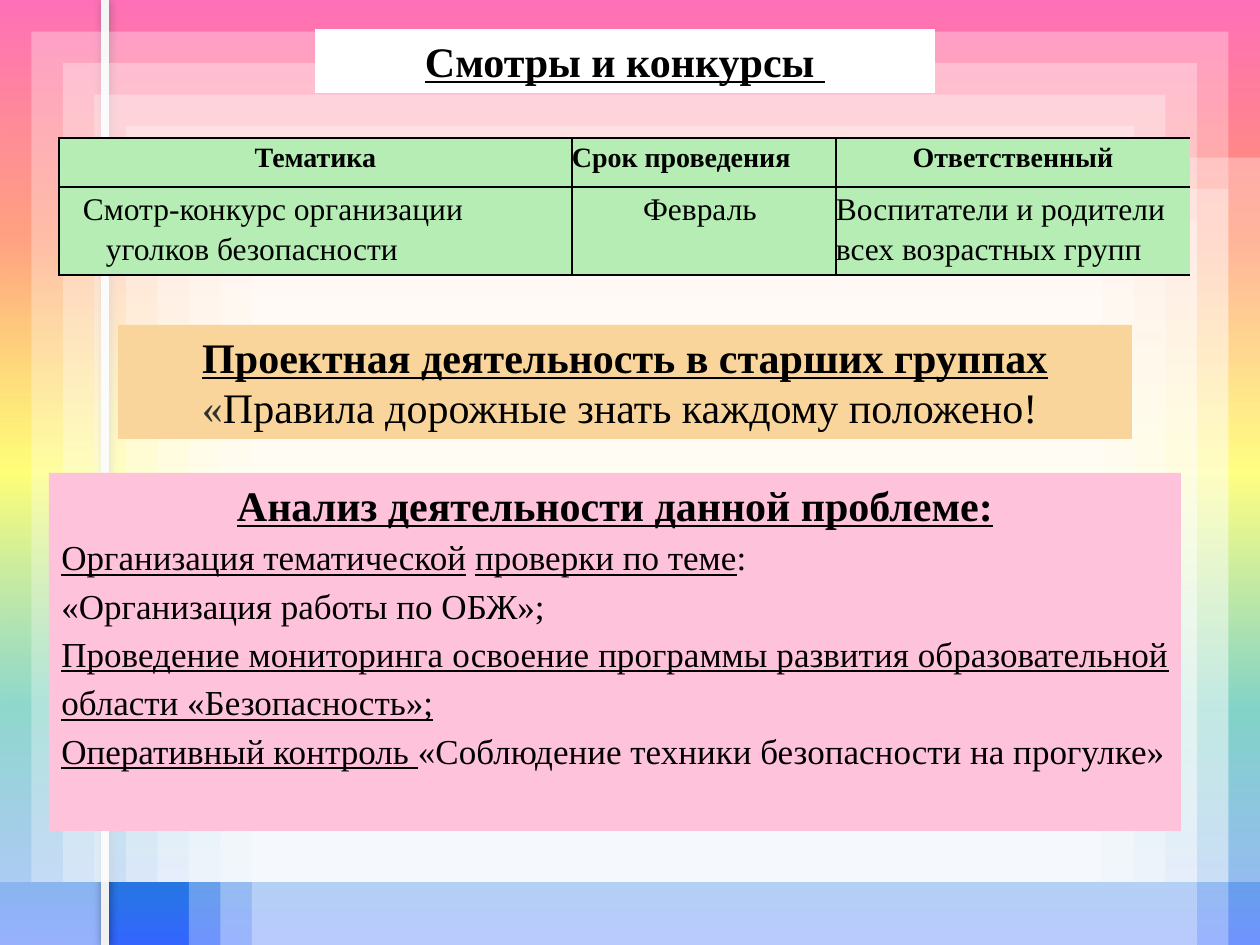
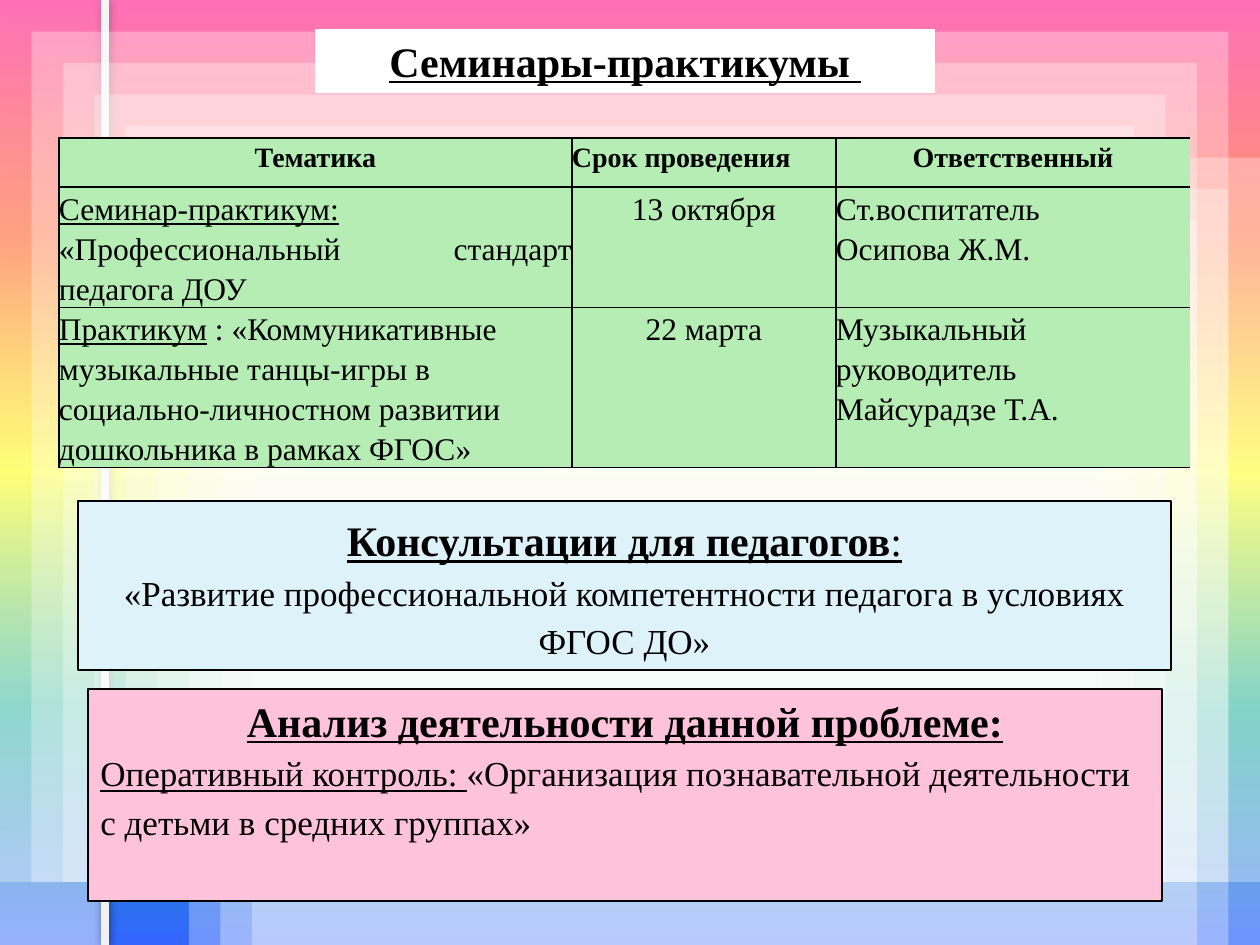
from lxml import etree
from pptx import Presentation
from pptx import util as u
from pptx.dml.color import RGBColor
from pptx.enum import shapes, text
from pptx.oxml import parse_xml
from pptx.oxml.ns import qn

# Shared look
FONT = "Times New Roman"
HEX = {"white": "FFFFFF", "black": "000000", "grey": "303030", "rail": "F1F1F1",
       "green": "B5EDB5", "sand": "F9D59B", "pink": "FFC2DB", "sky": "DEF2FA"}
SKY = [(0, "FF3399", 100), (25, "FF6633", 100), (50, "FFFF00", 100),
       (75, "01A78F", 100), (100, "3366FF", 100)]
FADE = [(0, HEX["white"], 50), (100, HEX["white"], 0)]
ALIGN = {"l": text.PP_ALIGN.LEFT, "c": text.PP_ALIGN.CENTER, "j": text.PP_ALIGN.JUSTIFY}
NS = "http://schemas.openxmlformats.org/drawingml/2006/main"
W, H, STEP = 1260, 945, 31.5
TITLE = (315, 29, 620, 64)
GRID = (59, 138)
COLS = (513, 264, 354)


# Content: a paragraph is (align, spacing, size, runs, indent);
# a run is (text, flags) with b bold, u underlined, g grey
def para(align, *runs, size=18, gap=1.15, indent=0):
    return align, gap, size, runs, indent


def head(words, gap=1.0, *more):
    return para("c", (words, "bu"), *more, size=24, gap=gap)


def body(align, *runs):
    return para(align, *runs, size=20)


TOP = [[para("c", ("Тематика", "b"), size=16)],
       [para("l", ("Срок проведения", "b"), size=16)],
       [para("c", ("Ответственный", "b"), size=16)]]
ISSUE = head("Анализ деятельности данной проблеме:")

SLIDES = [
    {"title": "Смотры и конкурсы ",
     "rows": (49, 88),
     "cells": [TOP, [
         [para("l", ("Смотр-конкурс организации", ""), indent=24),
          para("j", ("уголков безопасности", ""), indent=47)],
         [para("c", ("Февраль ", ""))],
         [para("l", ("Воспитатели и родители всех возрастных групп", ""))]]],
     "boxes": [
         ((118, 325, 1014, 114), "sand", False, [
             head("Проектная деятельность в старших группах"),
             para("c", ("«", "g"), ("Правила дорожные знать каждому положено! ", ""),
                  size=24, gap=1.0)]),
         ((49, 473, 1132, 358), "pink", False, [
             ISSUE,
             body("j", ("Организация тематической", "u"), (" ", ""),
                  ("проверки по теме", "u"), (": ", "")),
             body("j", ("«Организация работы по ОБЖ»;", "")),
             body("j", ("Проведение мониторинга освоение программы развития "
                        "образовательной области «Безопасность»;", "u")),
             body("j", ("Оперативный контроль ", "u"),
                  ("«Соблюдение техники безопасности на прогулке»", ""))])]},
    {"title": "Семинары-практикумы ",
     "rows": (49, 120, 160),
     "cells": [TOP, [
         [para("j", ("Семинар-практикум:", "u"), ("\n", ""),
               ("«Профессиональный стандарт педагога ДОУ", ""))],
         [para("c", ("13 октября", ""))],
         [para("l", ("Ст.воспитатель", "")), para("l", ("Осипова Ж.М.", ""))]], [
         [para("l", ("Практикум", "u"),
               (" : «Коммуникативные музыкальные танцы-игры в социально-личностном "
                "развитии дошкольника в рамках ФГОС»", ""))],
         [para("c", ("22 марта", ""))],
         [para("l", ("Музыкальный руководитель", "")),
          para("l", ("Майсурадзе Т.А.", ""))]]],
     "boxes": [
         ((88, 689, 1074, 212), "pink", True, [
             ISSUE,
             body("l", ("Оперативный контроль: ", "u"),
                  ("«Организация познавательной деятельности с детьми "
                   "в средних группах»", ""))]),
         ((78, 501, 1093, 169), "sky", True, [
             head("Консультации для педагогов", 1.15, (":", "u")),
             body("c", ("«Развитие профессиональной компетентности педагога "
                        "в условиях ФГОС ДО»", ""))])]},
]


# Helpers
def px(n):
    return u.Emu(round(n * 914400 / 126))


def rgb(name):
    return RGBColor.from_string(HEX[name])


def put(obj, **vals):
    for key, val in vals.items():
        setattr(obj, key, val)


def place(obj, box):
    put(obj, **dict(zip(("left", "top", "width", "height"), map(px, box))))


def grad(stops, ang):
    gs = "".join(f'<a:gs pos="{pos * 1000}"><a:srgbClr val="{col}">'
                 f'<a:alpha val="{op * 1000}"/></a:srgbClr></a:gs>'
                 for pos, col, op in stops)
    return parse_xml(f'<a:gradFill xmlns:a="{NS}" rotWithShape="1"><a:gsLst>{gs}</a:gsLst>'
                     f'<a:lin ang="{ang * 60000}" scaled="0"/></a:gradFill>')


def swap(host, fill):
    old = host.find(qn("a:solidFill"))
    host.replace(old, fill)


def write(frame, paras):
    for i, (align, gap, size, runs, indent) in enumerate(paras):
        p = frame.paragraphs[0] if i == 0 else frame.add_paragraph()
        put(p, alignment=ALIGN[align], line_spacing=gap)
        if indent:
            p._p.get_or_add_pPr().set("marL", str(px(indent)))
        for words, flags in runs:
            if words == "\n":
                p.add_line_break()
                continue
            run = p.add_run()
            run.text = words
            put(run.font, name=FONT, size=u.Pt(size), bold="b" in flags,
                underline="u" in flags)
            run.font.color.rgb = rgb("grey" if "g" in flags else "black")


def rect(slide, box, fill):
    s = slide.shapes.add_shape(shapes.MSO_SHAPE.RECTANGLE, *map(px, box))
    s.shadow.inherit = False
    s.fill.solid()
    s.fill.fore_color.rgb = rgb(fill)
    s.line.fill.background()
    return s


# Backdrop: gradient, nested translucent panes and a rail, on the master
def pane(slide, box):
    s = rect(slide, box, "white")
    col = s._element.spPr.find(qn("a:solidFill"))[0]
    etree.SubElement(col, qn("a:alpha")).set("val", "30000")
    return s


def backdrop(master, slide):
    master.background.fill.solid()
    swap(master.element.find(".//" + qn("p:bgPr")), grad(SKY, 90))
    parts = [pane(slide, (x, y, W - (x - 6 * STEP) - x, H - y))
             for x, y in ((STEP * (6 + i), STEP * (5 + i)) for i in range(3))]
    strip = rect(slide, (0, 0, 107, H), "white")
    swap(strip._element.spPr, grad(FADE, 270))
    rail = slide.shapes.add_connector(shapes.MSO_CONNECTOR.STRAIGHT,
                                      px(105), 0, px(105), px(H))
    rail.line.width = u.Pt(4.5)
    rail.line.color.rgb = rgb("rail")
    rail._element.spPr.append(parse_xml(
        f'<a:effectLst xmlns:a="{NS}"><a:outerShdw blurRad="{u.Pt(5)}" dist="0" dir="0">'
        f'<a:srgbClr val="{HEX["black"]}"><a:alpha val="40000"/></a:srgbClr>'
        '</a:outerShdw></a:effectLst>'))
    parts += [strip, rail]
    parts += [pane(slide, (m, m, W - 2 * m, 882 - m))
              for m in (STEP * i for i in range(6))]
    for i, part in enumerate(parts):
        master.shapes._spTree.insert(2 + i, part._element)


# Table
def edge(props, side, on):
    ln = etree.SubElement(props, qn("a:ln" + side), w=str(u.Pt(1)))
    if on:
        fill = etree.SubElement(ln, qn("a:solidFill"))
        etree.SubElement(fill, qn("a:srgbClr"), val=HEX["black"])
    else:
        etree.SubElement(ln, qn("a:noFill"))


def grid(slide, rows, cells):
    tab = slide.shapes.add_table(len(rows), len(COLS), *map(
        px, (*GRID, sum(COLS), sum(rows)))).table
    put(tab, first_row=False, horz_banding=False)
    for col, wide in zip(tab.columns, COLS):
        col.width = px(wide)
    for r, tall in enumerate(rows):
        tab.rows[r].height = px(tall)
        for c, paras in enumerate(cells[r]):
            cell = tab.cell(r, c)
            put(cell, margin_left=0, margin_right=0, margin_top=0, margin_bottom=0)
            for side in "LRTB":
                edge(cell._tc.get_or_add_tcPr(), side,
                     side != "R" or c < len(COLS) - 1)
            cell.fill.solid()
            cell.fill.fore_color.rgb = rgb("green")
            write(cell.text_frame, paras)


FRAME = {"word_wrap": True, "auto_size": text.MSO_AUTO_SIZE.NONE,
         "vertical_anchor": text.MSO_ANCHOR.TOP}


def build(slide, data):
    # Title
    title = slide.shapes.title
    place(title, TITLE)
    title.fill.solid()
    title.fill.fore_color.rgb = rgb("white")
    put(title.text_frame, **FRAME)
    write(title.text_frame, [head(data["title"])])
    grid(slide, data["rows"], data["cells"])
    # Text blocks
    for box, fill, lined, paras in data["boxes"]:
        s = rect(slide, box, fill)
        if lined:
            s.line.color.rgb = rgb("black")
            s.line.width = u.Pt(0.75)
        put(s.text_frame, **FRAME)
        write(s.text_frame, paras)


def main():
    deck = Presentation()
    put(deck, slide_width=px(W), slide_height=px(H))
    for i, data in enumerate(SLIDES):
        slide = deck.slides.add_slide(deck.slide_layouts[5])
        if i == 0:
            backdrop(deck.slide_master, slide)
        build(slide, data)
    deck.save("out.pptx")


if __name__ == "__main__":
    main()
